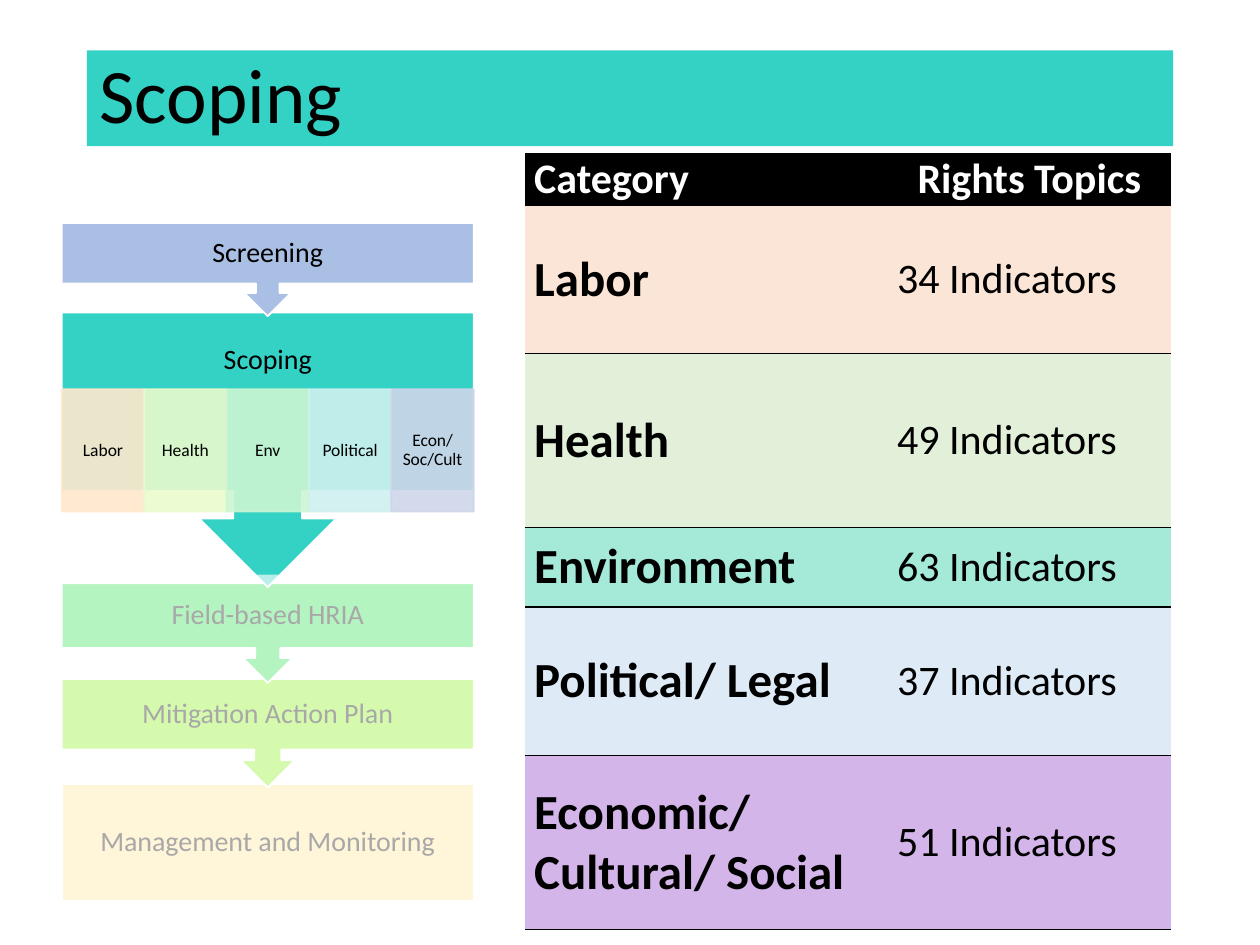
from pptx import Presentation
from pptx.dml.color import RGBColor
from pptx.enum.shapes import MSO_SHAPE
from pptx.enum.text import MSO_ANCHOR, MSO_AUTO_SIZE, PP_ALIGN
from pptx.oxml.ns import qn
from pptx.util import Inches, Pt
from lxml import etree

RECT, CALLOUT = MSO_SHAPE.RECTANGLE, MSO_SHAPE.DOWN_ARROW_CALLOUT
LEFT, CENTER = PP_ALIGN.LEFT, PP_ALIGN.CENTER
MIDDLE, NO_FIT = MSO_ANCHOR.MIDDLE, MSO_AUTO_SIZE.NONE

# Content
TITLE = "Scoping"
STEPS = [  # label, top, height, fill
    ("Screening", 1.77, 0.74, "AABFE4"),
    ("Scoping", 2.48, 2.18, "33D2C5"),
    ("Field-based HRIA", 4.63, 0.79, "23E148"),
    ("Mitigation Action Plan", 5.39, 0.86, "86F011"),
    ("Management and Monitoring", 6.22, 0.93, "FFE48F"),
]
TOPICS = [
    ("Labor", "FFE8CC"),
    ("Health", "EAFBCC"),
    ("Env", "CCF6D3"),
    ("Political", "CEF0EF"),
    ("Econ/ Soc/Cult", "CFD6EA"),
]
HEADER = ("Category", "Rights Topics")
INDICATORS = [  # category, count, row height, fill
    ("Labor", "34 Indicators", 1.18, "FBE5D6"),
    ("Health", "49 Indicators", 1.38, "E2F0D9"),
    ("Environment", "63 Indicators", 0.63, "A5E9D9"),
    ("Political/ Legal", "37 Indicators", 1.18, "DEEBF7"),
    ("Economic/ Cultural/ Social", "51 Indicators", 1.38, "D3B5E9"),
]

# Theme
THEME = {
    "font": "Calibri", "ink": "000000", "paper": "FFFFFF", "accent": "33D2C5",
    "title": 44, "step": 16, "topic": 10, "category": 28, "table": 24,
    "line": 1, "topic_opacity": 90, "veil_opacity": 66,
}

# Layout
FLOW_LEFT, FLOW_WIDTH = 0.49, 3.27
TOPIC_TOP, TOPIC_HEIGHT = 3.09, 0.97
SCOPING_TEXT_HEIGHT = 0.76
CALLOUT_BOX = 0.65
COLUMNS = (2.88, 2.24)
HEADER_HEIGHT = 0.37


def rgb(value):
    return RGBColor.from_string(value)


def set_opacity(fill_parent, percent):
    for color in fill_parent.iter(qn("a:srgbClr")):
        etree.SubElement(color, qn("a:alpha"), val=str(percent * 1000))


def write(frame, text, size, color=THEME["ink"], bold=False, align=CENTER, spacing=None):
    frame.text = text
    paragraph = frame.paragraphs[0]
    paragraph.alignment = align
    if spacing:
        paragraph.line_spacing = spacing
    formats = {"name": THEME["font"], "size": Pt(size), "bold": bold}
    for key, value in formats.items():
        setattr(paragraph.font, key, value)
    paragraph.font.color.rgb = rgb(color)


def set_frame(frame, left, top, right, bottom):
    formats = {
        "word_wrap": True, "auto_size": NO_FIT, "vertical_anchor": MIDDLE,
        "margin_left": Inches(left), "margin_top": Inches(top),
        "margin_right": Inches(right), "margin_bottom": Inches(bottom),
    }
    for key, value in formats.items():
        setattr(frame, key, value)


def add_block(slide, kind, box, fill, line=None, opacity=None):
    block = slide.shapes.add_shape(kind, *map(Inches, box))
    block.shadow.inherit = False
    block.fill.solid()
    block.fill.fore_color.rgb = rgb(fill)
    if line:
        block.line.color.rgb = rgb(line)
        block.line.width = Pt(THEME["line"])
    else:
        block.line.fill.background()
    if opacity:
        set_opacity(block._element.spPr, opacity)
    return block


def add_title(slide):
    title = slide.shapes.title
    title.left, title.top, title.width, title.height = map(Inches, (0.69, 0.4, 8.62, 0.76))
    title.fill.solid()
    title.fill.fore_color.rgb = rgb(THEME["accent"])
    set_frame(title.text_frame, 0.1, 0.05, 0.1, 0.05)
    write(title.text_frame, TITLE, THEME["title"], align=LEFT, spacing=0.9)


def add_topics(slide):
    width = FLOW_WIDTH / len(TOPICS)
    for index, (label, fill) in enumerate(TOPICS):
        box = (FLOW_LEFT + index * width, TOPIC_TOP, width, TOPIC_HEIGHT)
        tile = add_block(slide, RECT, box, fill, fill, THEME["topic_opacity"])
        set_frame(tile.text_frame, 0.08, 0.01, 0.08, 0.01)
        write(tile.text_frame, label, THEME["topic"], spacing=0.9)


def add_flow(slide):
    # Later steps lie behind earlier ones, so each arrow tip stays on top
    for step in reversed(STEPS):
        label, top, height, fill = step
        kind = RECT if step is STEPS[-1] else CALLOUT
        block = add_block(slide, kind, (FLOW_LEFT, top, FLOW_WIDTH, height), fill, THEME["paper"])
        bottom = 0.12
        if label == "Scoping":
            bottom += height * CALLOUT_BOX - SCOPING_TEXT_HEIGHT
        set_frame(block.text_frame, 0.12, 0.12, 0.12, bottom)
        write(block.text_frame, label, THEME["step"], spacing=0.9)
        if label == "Scoping":
            add_topics(slide)


def set_borders(cell, visible):
    properties = cell._tc.get_or_add_tcPr()
    for side in ("lnL", "lnR", "lnT", "lnB"):
        border = etree.SubElement(properties, qn(f"a:{side}"), w=str(Pt(THEME["line"])))
        if side in visible:
            solid = etree.SubElement(border, qn("a:solidFill"))
            etree.SubElement(solid, qn("a:srgbClr"), val=THEME["ink"])
        else:
            etree.SubElement(border, qn("a:noFill"))


def add_indicator_table(slide):
    heights = [HEADER_HEIGHT] + [row[2] for row in INDICATORS]
    box = (4.17, 1.22, sum(COLUMNS), sum(heights))
    table = slide.shapes.add_table(len(heights), len(COLUMNS), *map(Inches, box)).table
    table.first_row = table.horz_banding = False
    for column, width in zip(table.columns, COLUMNS):
        column.width = Inches(width)
    for row, height in zip(table.rows, heights):
        row.height = Inches(height)

    header_style = {"size": THEME["table"], "color": THEME["paper"], "bold": True}
    header_styles = ({**header_style, "align": LEFT}, {**header_style, "align": CENTER})
    body_styles = (
        {"size": THEME["category"], "bold": True, "align": LEFT},
        {"size": THEME["table"], "align": LEFT},
    )
    rows = [(HEADER, THEME["ink"], header_styles)]
    rows += [((name, count), fill, body_styles) for name, count, _, fill in INDICATORS]
    for r, (texts, fill, styles) in enumerate(rows):
        for c, (text, style) in enumerate(zip(texts, styles)):
            cell = table.cell(r, c)
            set_borders(cell, ("lnT", "lnB"))
            cell.fill.solid()
            cell.fill.fore_color.rgb = rgb(fill)
            cell.vertical_anchor = MIDDLE
            cell.margin_left = cell.margin_right = Inches(0.07)
            cell.margin_top = cell.margin_bottom = 0
            write(cell.text_frame, text, **style)


def main():
    deck = Presentation()
    deck.slide_width, deck.slide_height = Inches(10), Inches(7.5)
    slide = deck.slides.add_slide(deck.slide_layouts[5])
    add_flow(slide)
    add_title(slide)
    add_indicator_table(slide)
    # Veil that fades the steps still to come
    add_block(slide, RECT, (0.45, 4.56, 3.36, 2.81), THEME["paper"], opacity=THEME["veil_opacity"])
    deck.save("out.pptx")


if __name__ == "__main__":
    main()
